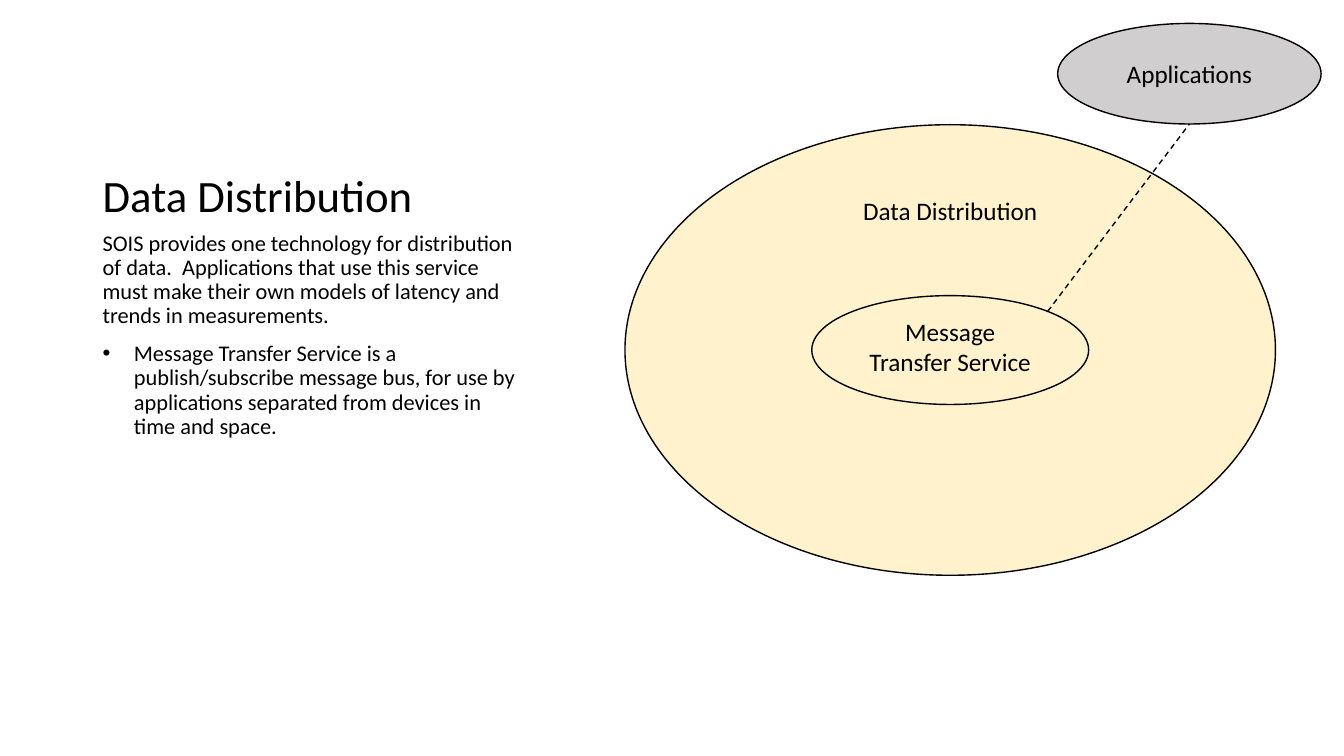
from dataclasses import dataclass

from lxml.etree import SubElement
from pptx import Presentation
from pptx.dml.color import RGBColor
from pptx.enum.dml import MSO_LINE
from pptx.enum.shapes import MSO_CONNECTOR, MSO_SHAPE
from pptx.enum.text import MSO_ANCHOR, PP_ALIGN
from pptx.oxml.ns import qn
from pptx.util import Inches, Pt

WIDTH, HEIGHT = Inches(13.33), Inches(7.5)


@dataclass(frozen=True)
class Theme:
    font: str = "Calibri"
    ink: RGBColor = RGBColor(0, 0, 0)
    service: RGBColor = RGBColor(0xFF, 0xF2, 0xCC)
    client: RGBColor = RGBColor(0xD0, 0xCE, 0xCE)
    title: int = 32
    label: int = 18
    body: int = 16
    line: int = 1


THEME = Theme()


def place(x, y):
    return int(WIDTH * x / 100), int(HEIGHT * y / 100)


def box(x, y, w, h):
    return *place(x, y), *place(w, h)


def add_run(p, text, size):
    r = p.add_run()
    r.text = text
    r.font.name = THEME.font
    r.font.size = Pt(size)
    r.font.color.rgb = THEME.ink


def add_bullet(p):
    pPr = p._p.get_or_add_pPr()
    indent = Inches(0.31)
    pPr.set("marL", str(indent))
    pPr.set("indent", str(-indent))
    SubElement(pPr, qn("a:buFont"), typeface="Arial")
    SubElement(pPr, qn("a:buChar"), char="•")


def add_text(s, area, paragraphs, size, anchor=MSO_ANCHOR.TOP, before=0):
    tf = s.shapes.add_textbox(*box(*area)).text_frame
    tf.word_wrap = True
    tf.vertical_anchor = anchor
    for i, (text, bulleted) in enumerate(paragraphs):
        p = tf.add_paragraph() if i else tf.paragraphs[0]
        p.line_spacing = 0.9
        p.space_before = Pt(before)
        if bulleted:
            add_bullet(p)
        add_run(p, text, size)


def add_ellipse(s, area, text, fill, anchor=MSO_ANCHOR.TOP):
    sp = s.shapes.add_shape(MSO_SHAPE.OVAL, *box(*area))
    sp.shadow.inherit = False
    sp.fill.solid()
    sp.fill.fore_color.rgb = fill
    sp.line.color.rgb = THEME.ink
    sp.line.width = Pt(THEME.line)
    tf = sp.text_frame
    tf.word_wrap = True
    tf.vertical_anchor = anchor
    p = tf.paragraphs[0]
    p.alignment = PP_ALIGN.CENTER
    add_run(p, text, THEME.label)


def add_dashed_link(s, start, end):
    link = s.shapes.add_connector(MSO_CONNECTOR.STRAIGHT, *place(*start), *place(*end))
    link.line.color.rgb = THEME.ink
    link.line.width = Pt(THEME.line)
    link.line.dash_style = MSO_LINE.DASH
    SubElement(link._element.spPr, qn("a:effectLst"))


def main():
    prs = Presentation()
    prs.slide_width, prs.slide_height = WIDTH, HEIGHT
    s = prs.slides.add_slide(prs.slide_layouts[6])

    add_text(s, (6.9, 6.67, 32.26, 23.33), [("Data Distribution", False)],
             THEME.title, MSO_ANCHOR.BOTTOM)
    add_text(s, (6.9, 30, 32.26, 55.6), [
        ("SOIS provides one technology for distribution of data.  Applications that use "
         "this service must make their own models of latency and trends in measurements.", False),
        ("Message Transfer Service is a publish/subscribe message bus, for use by "
         "applications separated from devices in time and space.", True),
    ], THEME.body, before=10)

    add_ellipse(s, (46.5, 16.5, 48.4, 59.6), "Data Distribution", THEME.service)
    add_ellipse(s, (60.4, 39.1, 20.6, 14.4), "Message Transfer Service", THEME.service)
    add_ellipse(s, (78.7, 3.1, 19.6, 13.3), "Applications", THEME.client, MSO_ANCHOR.MIDDLE)
    add_dashed_link(s, (77.95, 41.2), (88.5, 16.4))

    prs.save("out.pptx")


if __name__ == "__main__":
    main()
